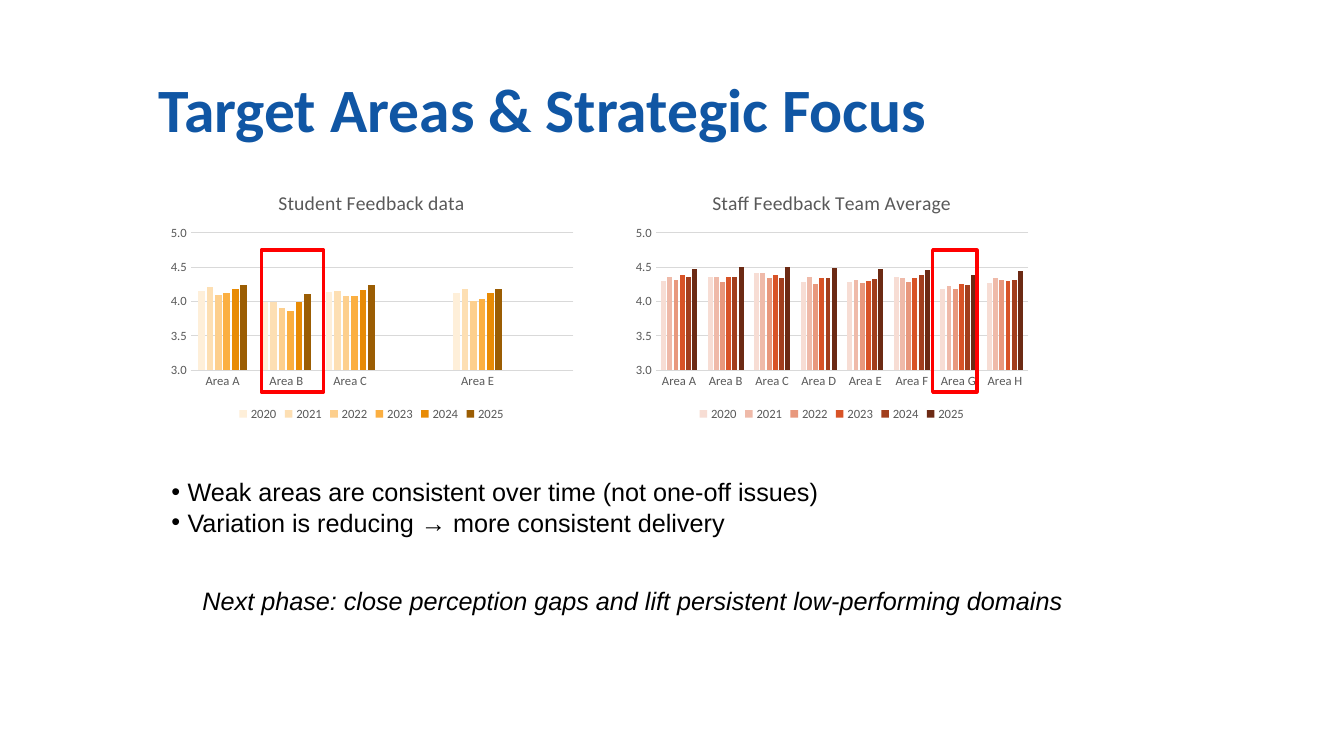
from lxml import etree
from pptx import Presentation
from pptx import util as u
from pptx.chart.data import CategoryChartData
from pptx.dml.color import RGBColor
from pptx.enum import chart as ch, shapes, text
from pptx.oxml import parse_xml
from pptx.oxml.ns import nsdecls, qn

# Content
TITLE = "Target Areas & Strategic Focus"
BULLETS = ["Weak areas are consistent over time (not one-off issues)",
           "Variation is reducing → more consistent delivery"]
NEXT_PHASE = "Next phase: close perception gaps and lift persistent low-performing domains"
YEARS = ["2020", "2021", "2022", "2023", "2024", "2025"]
CHARTS = [
    {"title": "Student Feedback data",
     "box": (1.6, 1.74, 4.17, 2.48),
     "areas": ["Area A", "Area B", "Area C", "", "Area E", ""],
     "values": [(4.16, 3.99, 4.14, None, 4.13, None),
                (4.21, 4, 4.16, None, 4.18, None),
                (4.1, 3.91, 4.08, None, 4.01, None),
                (4.12, 3.86, 4.08, None, 4.04, None),
                (4.18, 3.99, 4.17, None, 4.13, None),
                (4.24, 4.11, 4.24, None, 4.19, None)],
     "colors": ["FEEFD9", "FDDFB3", "FDCF8D", "FBAF41", "E88B05", "9B5D03"]},
    {"title": "Staff Feedback Team Average",
     "box": (6.22, 1.74, 4.06, 2.48),
     "areas": [f"Area {letter}" for letter in "ABCDEFGH"],
     "values": [(4.3, 4.36, 4.42, 4.29, 4.29, 4.36, 4.18, 4.27),
                (4.36, 4.36, 4.42, 4.36, 4.31, 4.34, 4.23, 4.34),
                (4.32, 4.28, 4.34, 4.26, 4.27, 4.28, 4.18, 4.32),
                (4.38, 4.36, 4.39, 4.35, 4.3, 4.35, 4.26, 4.3),
                (4.36, 4.36, 4.35, 4.35, 4.33, 4.39, 4.24, 4.31),
                (4.48, 4.5, 4.51, 4.49, 4.47, 4.46, 4.38, 4.44)],
     "colors": ["F7DDD4", "EFBAA9", "E8987D", "D85327", "A23E1D", "6C2A14"]},
]
WEAK_AREAS = [(2.59, 2.48, 0.62, 1.41), (9.25, 2.48, 0.44, 1.41)]
PLOT = {"x": 0.07, "y": 0.23, "w": 0.91, "h": 0.55}

THEME = {
    "title": {"name": "Calibri", "size": 44, "color": "1056A4", "bold": True},
    "body": {"name": "Arial", "size": 18, "color": "000000"},
    "next": {"name": "Arial", "size": 18, "color": "000000", "italic": True},
    "chart": {"name": "Calibri", "size": 9, "color": "595959"},
    "chart title": {"name": "Calibri", "size": 14, "color": "595959", "bold": False},
    "grid": "D9D9D9",
    "highlight": "FF0000",
}


def rgb(color):
    return RGBColor.from_string(color)


def style(font, name):
    for key, value in THEME[name].items():
        if key == "color":
            font.color.rgb = rgb(value)
        else:
            setattr(font, key, u.Pt(value) if key == "size" else value)


def place(sp, box):
    for key, value in zip(("left", "top", "width", "height"), box):
        setattr(sp, key, u.Inches(value))


def set_frame(tf, anchor):
    for key, value in {"word_wrap": True, "auto_size": text.MSO_AUTO_SIZE.NONE,
                       "vertical_anchor": anchor}.items():
        setattr(tf, key, value)


def rule_line(line):
    line.color.rgb = rgb(THEME["grid"])
    line.width = u.Pt(0.75)


def fix_plot_area(chart):
    area = chart._chartSpace.chart.plotArea
    for old in area.findall(qn("c:layout")):
        area.remove(old)
    layout = parse_xml(f"<c:layout {nsdecls('c')}><c:manualLayout/></c:layout>")
    parts = {"layoutTarget": "inner", "xMode": "edge", "yMode": "edge", **PLOT}
    for tag, value in parts.items():
        etree.SubElement(layout[0], qn(f"c:{tag}"), val=str(value))
    area.insert(0, layout)


def add_feedback_chart(s, feedback):
    data = CategoryChartData(number_format="0.00")
    data.categories = feedback["areas"]
    for year, values in zip(YEARS, feedback["values"]):
        data.add_series(year, values)
    box = map(u.Inches, feedback["box"])
    chart = s.shapes.add_chart(ch.XL_CHART_TYPE.COLUMN_CLUSTERED, *box, data).chart
    style(chart.font, "chart")
    fix_plot_area(chart)

    # Title and legend
    chart.has_title = True
    p = chart.chart_title.text_frame.paragraphs[0]
    r = p.add_run()
    r.text = feedback["title"]
    style(r.font, "chart title")
    chart.chart_title.include_in_layout = False
    chart.has_legend = True
    chart.legend.position = ch.XL_LEGEND_POSITION.BOTTOM
    chart.legend.include_in_layout = False
    style(chart.legend.font, "chart")

    # Columns
    plot = chart.plots[0]
    for key, value in {"gap_width": 219, "overlap": -27, "vary_by_categories": False}.items():
        setattr(plot, key, value)
    for series, color in zip(plot.series, feedback["colors"]):
        series.format.fill.solid()
        series.format.fill.fore_color.rgb = rgb(color)

    # Axes
    cat, val = chart.category_axis, chart.value_axis
    for axis in (cat, val):
        axis.major_tick_mark = axis.minor_tick_mark = ch.XL_TICK_MARK.NONE
        style(axis.tick_labels.font, "chart")
    rule_line(cat.format.line)
    for key, value in {"minimum_scale": 3, "maximum_scale": 5, "major_unit": 0.5,
                       "has_major_gridlines": True}.items():
        setattr(val, key, value)
    rule_line(val.major_gridlines.format.line)
    val.format.line.fill.background()
    val.tick_labels.number_format = "0.0"
    val.tick_labels.number_format_is_linked = False


def main():
    prs = Presentation()
    prs.slide_width, prs.slide_height = u.Inches(13.33), u.Inches(7.5)
    s = prs.slides.add_slide(prs.slide_layouts[1])

    # Title
    title = s.shapes.title
    place(title, (1.47, 0.38, 9.26, 1.47))
    set_frame(title.text_frame, text.MSO_ANCHOR.MIDDLE)
    p = title.text_frame.paragraphs[0]
    p.text, p.alignment, p.line_spacing = TITLE, text.PP_ALIGN.LEFT, 0.9
    style(p.runs[0].font, "title")

    # Charts
    for feedback in CHARTS:
        add_feedback_chart(s, feedback)

    # Bullets
    body = s.placeholders[1]
    place(body, (1.6, 4.37, 6.68, 1.01))
    tf = body.text_frame
    set_frame(tf, text.MSO_ANCHOR.BOTTOM)
    for i, line in enumerate(BULLETS):
        p = tf.paragraphs[0] if i == 0 else tf.add_paragraph()
        p.text, p.space_before = line, u.Pt(0)
        pPr = p._p.get_or_add_pPr()
        indent = u.Inches(0.16)
        pPr.set("marL", str(indent))
        pPr.set("indent", str(-indent))
        etree.SubElement(pPr, qn("a:buFont"), typeface="Arial")
        etree.SubElement(pPr, qn("a:buChar"), char="•")
        style(p.runs[0].font, "body")

    # Next phase
    sp = s.shapes.add_textbox(*map(u.Inches, (1.91, 5.76, 8.82, 0.4)))
    set_frame(sp.text_frame, text.MSO_ANCHOR.MIDDLE)
    r = sp.text_frame.paragraphs[0].add_run()
    r.text = NEXT_PHASE
    style(r.font, "next")

    # Weak area frames
    for box in WEAK_AREAS:
        sp = s.shapes.add_shape(shapes.MSO_SHAPE.RECTANGLE, *map(u.Inches, box))
        sp.shadow.inherit = False
        sp.fill.background()
        sp.line.color.rgb = rgb(THEME["highlight"])
        sp.line.width = u.Pt(2.25)

    prs.save("out.pptx")


if __name__ == "__main__":
    main()
